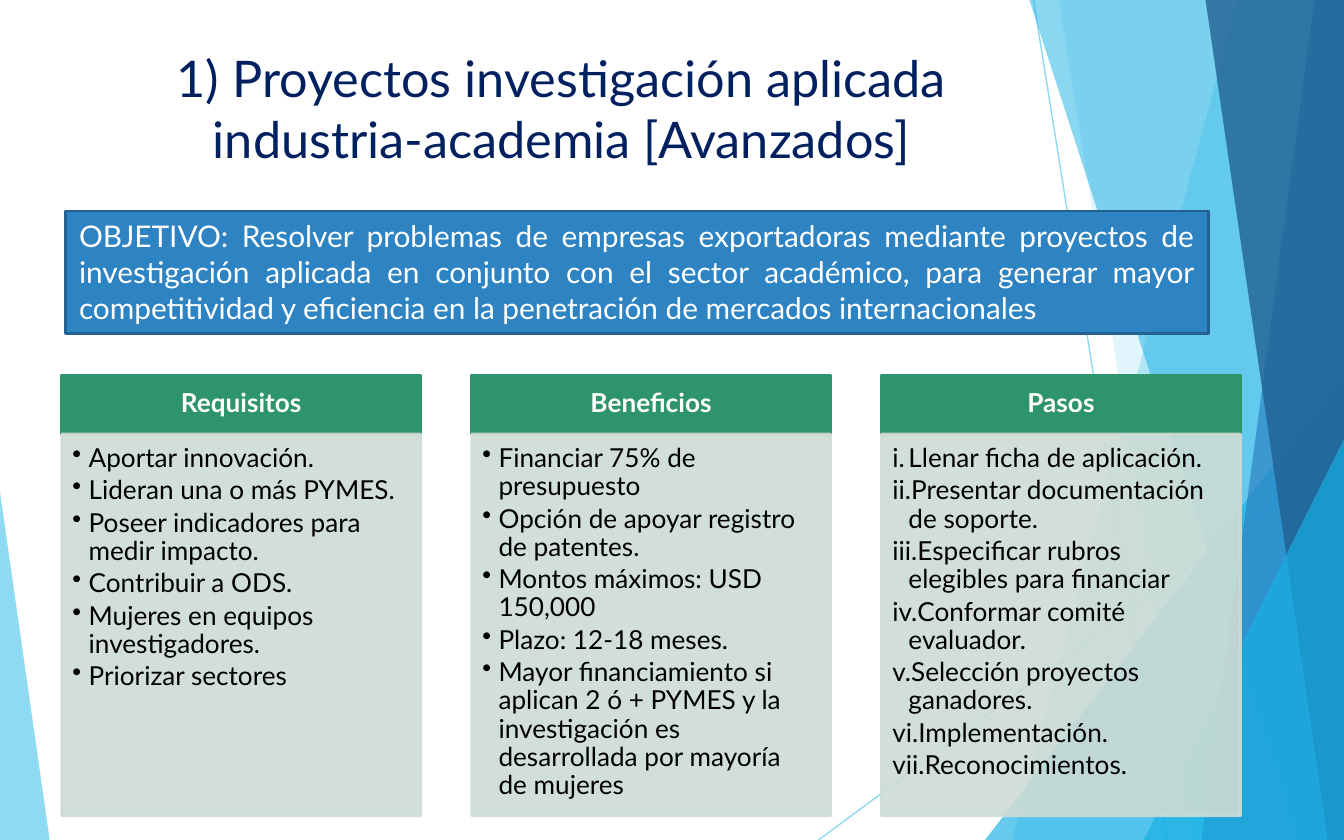
"""Build a slide with a goal banner and three columns about applied research projects."""
import lxml.etree
import pptx
import pptx.dml.color
import pptx.enum.shapes
import pptx.enum.text
import pptx.oxml.ns
import pptx.util

WIDTH, HEIGHT = 10, 6.25
FONT = "Lato"
SKY, CYAN, BLUE, NAVY = "5FCBEF", "17B0E4", "2E83C3", "226292"
GREEN, PALE, WHITE = "2E946B", "CDDCD4", "FFFFFF"

TITLE = "1) Proyectos investigación aplicada industria-academia [Avanzados]"
GOAL = (
    "OBJETIVO: Resolver problemas de empresas exportadoras mediante proyectos de "
    "investigación aplicada en conjunto con el sector académico, para generar mayor "
    "competitividad y eficiencia en la penetración de mercados internacionales"
)
COLUMNS = [
    ("Requisitos", "bullet", [
        "Aportar innovación.",
        "Lideran una o más PYMES.",
        "Poseer indicadores para medir impacto.",
        "Contribuir a ODS.",
        "Mujeres en equipos investigadores.",
        "Priorizar sectores",
    ]),
    ("Beneficios", "bullet", [
        "Financiar 75% de presupuesto",
        "Opción de apoyar registro de patentes.",
        "Montos máximos: USD 150,000",
        "Plazo: 12-18 meses.",
        "Mayor financiamiento si aplican 2 ó + PYMES y la investigación es "
        "desarrollada por mayoría de mujeres",
    ]),
    ("Pasos", "roman", [
        "Llenar ficha de aplicación.",
        "Presentar documentación de soporte.",
        "Especificar rubros elegibles para financiar",
        "Conformar comité evaluador.",
        "Selección proyectos ganadores.",
        "Implementación.",
        "Reconocimientos.",
    ]),
]
MARKERS = {
    "bullet": ("a:buChar", {"char": "•"}),
    "roman": ("a:buAutoNum", {"type": "romanLcPeriod"}),
}
RAYS = [(7.69, 0, 8.69, HEIGHT), (WIDTH, 3.36, 6.09, HEIGHT)]
FACETS = [
    ("band", (9.21, 7.53), SKY, 36),
    ("band", (7.88, 8.87), SKY, 20),
    ("triangle", (7.33, 2.78, 2.67, 1), CYAN, 66),
    ("band", (7.66, 9.68), CYAN, 50),
    ("band", (9.78, 8.94), BLUE, 70),
    ("band", (8.97, 9.88), NAVY, 80),
    ("triangle", (8.51, 3.27, 1.49, 1), CYAN, 66),
    ("triangle", (0, 3.66, 0.37, 0), SKY, 70),
]
COLUMN_LEFT, COLUMN_STEP, COLUMN_WIDTH = 0.46, 3.05, 2.67
HEADER_TOP, HEADER_HEIGHT, BODY_HEIGHT = 2.79, 0.44, 2.84

ALIGN = pptx.enum.text.PP_ALIGN
ANCHOR = pptx.enum.text.MSO_ANCHOR
SHAPE = pptx.enum.shapes.MSO_SHAPE


def rgb(value):
    return pptx.dml.color.RGBColor.from_string(value)


def inches(*values):
    return [pptx.util.Inches(value) for value in values]


def add_node(parent, tag, **attributes):
    return lxml.etree.SubElement(parent, pptx.oxml.ns.qn(tag), attributes)


def set_opacity(shape, percent):
    for color in list(shape.element.spPr.iter(pptx.oxml.ns.qn("a:srgbClr"))):
        add_node(color, "a:alpha", val=str(percent * 1000))


def paint(shape, fill, line=None, weight=1.5, opacity=100):
    shape.shadow.inherit = False
    shape.fill.solid()
    shape.fill.fore_color.rgb = rgb(fill)
    if line:
        shape.line.color.rgb = rgb(line)
        shape.line.width = pptx.util.Pt(weight)
    else:
        shape.line.fill.background()
    if opacity < 100:
        set_opacity(shape, opacity)


def write(shape, texts, size, color, align=ALIGN.LEFT, anchor=ANCHOR.TOP, bold=False,
          insets=(0.1, 0.05, 0.1, 0.05), spacing=1.0, after=0, marker=None):
    frame = shape.text_frame
    frame.word_wrap = True
    frame.auto_size = pptx.enum.text.MSO_AUTO_SIZE.NONE
    frame.vertical_anchor = anchor
    (frame.margin_left, frame.margin_top,
     frame.margin_right, frame.margin_bottom) = inches(*insets)
    for index, text in enumerate(texts):
        para = frame.add_paragraph() if index else frame.paragraphs[0]
        para.alignment = align
        para.line_spacing = spacing
        para.space_before = pptx.util.Pt(0)
        para.space_after = pptx.util.Pt(after)
        span = para.add_run()
        span.text = text
        span.font.name = FONT
        span.font.size = pptx.util.Pt(size)
        span.font.bold = bold
        span.font.color.rgb = rgb(color)
        if marker:
            tag, attributes = MARKERS[marker]
            properties = para._p.get_or_add_pPr()
            indent = pptx.util.Inches(0.12)
            properties.set("marL", str(indent))
            properties.set("indent", str(-indent))
            add_node(properties, tag, **attributes)


def add_box(page, left, top, width, height, **style):
    box = page.shapes.add_shape(SHAPE.RECTANGLE, *inches(left, top, width, height))
    paint(box, **style)
    return box


def add_background(page):
    for ray in RAYS:
        line = page.shapes.add_connector(
            pptx.enum.shapes.MSO_CONNECTOR.STRAIGHT, *inches(*ray))
        line.line.color.rgb = rgb(SKY)
        line.line.width = pptx.util.Pt(0.75)
        set_opacity(line, 70)
        add_node(line.element.spPr, "a:effectLst")
    for kind, place, color, opacity in FACETS:
        if kind == "band":
            upper, lower = place
            builder = page.shapes.build_freeform(*inches(upper, 0))
            corners = [(WIDTH, 0), (WIDTH, HEIGHT), (lower, HEIGHT)]
            builder.add_line_segments([inches(*corner) for corner in corners], close=True)
            facet = builder.convert_to_shape()
        else:
            left, top, width, apex = place
            facet = page.shapes.add_shape(
                SHAPE.ISOSCELES_TRIANGLE, *inches(left, top, width, HEIGHT - top))
            facet.adjustments[0] = apex
        paint(facet, color, opacity=opacity)


def main():
    deck = pptx.Presentation()
    deck.slide_width, deck.slide_height = inches(WIDTH, HEIGHT)
    page = deck.slides.add_slide(deck.slide_layouts[5])
    add_background(page)

    title = page.shapes.title
    title.left, title.top, title.width, title.height = inches(0.49, 0.3, 7.37, 3.81)
    write(title, [TITLE], 27, "002060", align=ALIGN.CENTER)

    banner = add_box(page, 0.49, 1.57, 8.5, 0.91, fill=BLUE, line="226190")
    write(banner, [GOAL], 16, WHITE, align=ALIGN.JUSTIFY)

    for index, (heading, marker, items) in enumerate(COLUMNS):
        left = COLUMN_LEFT + index * COLUMN_STEP
        header = add_box(page, left, HEADER_TOP, COLUMN_WIDTH, HEADER_HEIGHT,
                         fill=GREEN, line=GREEN)
        write(header, [heading], 14, WHITE, align=ALIGN.CENTER, anchor=ANCHOR.MIDDLE,
              bold=True, insets=(0.11, 0.06, 0.11, 0.06), spacing=0.9)
        body = add_box(page, left, HEADER_TOP + HEADER_HEIGHT, COLUMN_WIDTH, BODY_HEIGHT,
                       fill=PALE, line=PALE, opacity=90)
        write(body, items, 14, "000000", insets=(0.08, 0.08, 0.11, 0.12),
              spacing=0.9, after=2.2, marker=marker)

    deck.save("out.pptx")


if __name__ == "__main__":
    main()
